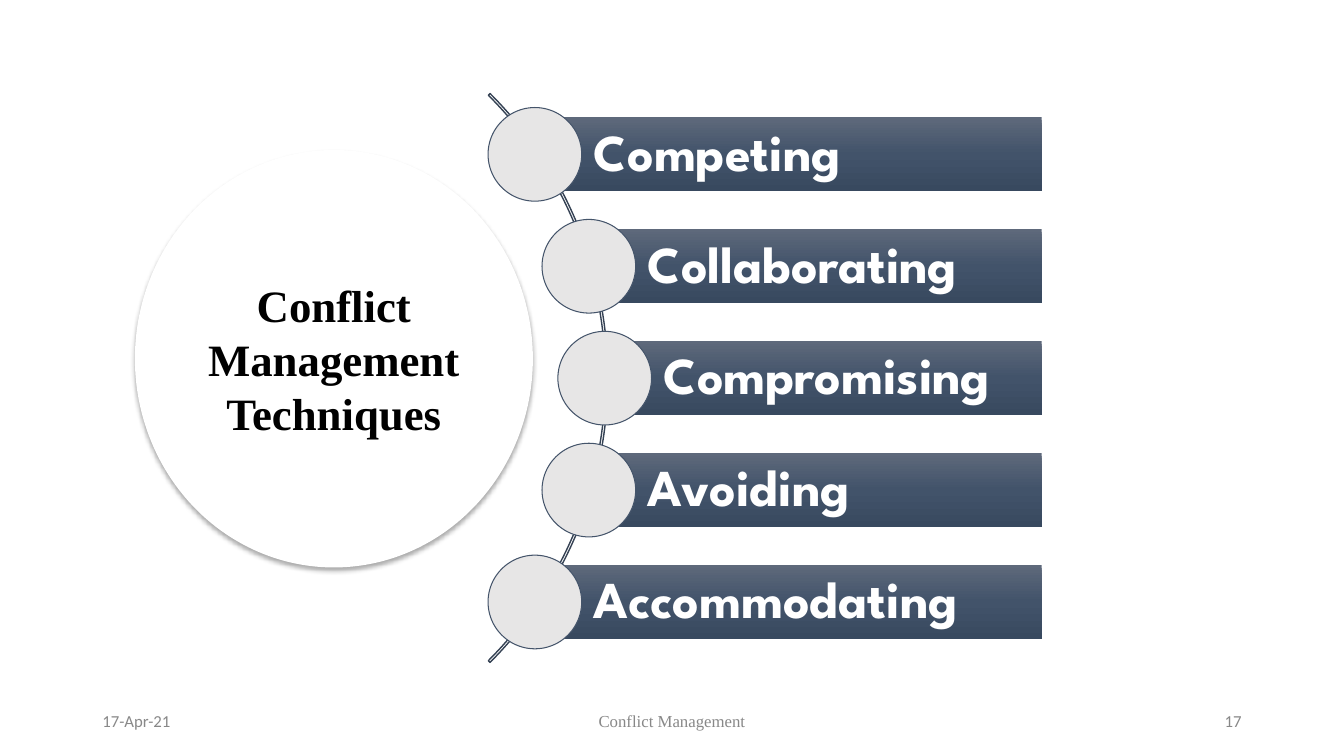
from dataclasses import dataclass
from copy import deepcopy

from lxml.etree import SubElement
from pptx import Presentation
from pptx.dml.color import RGBColor
from pptx.enum.shapes import MSO_SHAPE
from pptx.enum.text import MSO_ANCHOR, PP_ALIGN
from pptx.oxml.ns import qn
from pptx.shapes.autoshape import Shape
from pptx.shapes.shapetree import GroupShapes, SlideShapes
from pptx.text.text import TextFrame
from pptx.util import Cm, Pt


@dataclass(frozen=True)
class Theme:
    white: str = "FFFFFF"
    black: str = "000000"
    grey: str = "888888"
    arc_line: str = "354254"
    node_fill: str = "E7E6E6"
    node_line: str = "44546A"
    bar_stops: tuple[tuple[float, str], ...] = (
        (0, "5E697B"), (0.5, "42536A"), (1, "38495F"))
    bar_font: str = "League Spartan"
    heading_font: str = "Times New Roman"
    footer_font: str = "Calibri"
    bar_size: int = 37
    heading_size: int = 32
    footer_size: int = 12


@dataclass(frozen=True)
class Box:
    left: float
    top: float
    width: float
    height: float

    def lengths(self) -> tuple[Cm, Cm, Cm, Cm]:
        return Cm(self.left), Cm(self.top), Cm(self.width), Cm(self.height)


@dataclass(frozen=True)
class Style:
    font: str
    size: int
    color: str
    bold: bool = False
    align: PP_ALIGN = PP_ALIGN.LEFT
    line_spacing: float = 1.0
    insets: tuple[float, float, float, float] = (0.25, 0.13, 0.25, 0.13)


@dataclass(frozen=True)
class Technique:
    name: str
    node_x: float


@dataclass(frozen=True)
class FooterItem:
    text: str
    box: Box
    font: str
    align: PP_ALIGN


THEME = Theme()
ARC = Box(-4.95, -0.61, 20.27, 20.27)
HEADING = Box(3.4, 3.78, 10.03, 10.52)
MIDDLE_Y, PITCH = 9.53, 2.82
BAR_RIGHT, BAR_HEIGHT, NODE_SIZE = 26.25, 1.87, 2.36

TECHNIQUES = [
    Technique("Competing", 13.48),
    Technique("Collaborating", 14.84),
    Technique("Compromising", 15.24),
    Technique("Avoiding", 14.84),
    Technique("Accommodating", 13.48),
]
FOOTER = [
    FooterItem("17-Apr-21", Box(2.33, 17.66, 7.62, 1.01),
               THEME.footer_font, PP_ALIGN.LEFT),
    FooterItem("Conflict Management", Box(11.22, 17.66, 11.43, 1.01),
               THEME.heading_font, PP_ALIGN.CENTER),
    FooterItem("17", Box(23.92, 17.66, 7.62, 1.01),
               THEME.footer_font, PP_ALIGN.RIGHT),
]


def rgb(color: str) -> RGBColor:
    return RGBColor.from_string(color)


def apply_format(target: object, values: dict[str, object]) -> None:
    for name, value in values.items():
        setattr(target, name, value)


def write(frame: TextFrame, text: str, style: Style) -> None:
    left, top, right, bottom = style.insets
    apply_format(frame, {
        "word_wrap": True, "vertical_anchor": MSO_ANCHOR.MIDDLE,
        "margin_left": Cm(left), "margin_top": Cm(top),
        "margin_right": Cm(right), "margin_bottom": Cm(bottom)})
    paragraph = frame.paragraphs[0]
    apply_format(paragraph, {
        "alignment": style.align, "line_spacing": style.line_spacing})
    run = paragraph.add_run()
    run.text = text
    apply_format(run.font, {
        "name": style.font, "size": Pt(style.size), "bold": style.bold})
    run.font.color.rgb = rgb(style.color)


def add_part(shapes: SlideShapes | GroupShapes, preset: MSO_SHAPE, box: Box,
             fill: str | None = None, line: str | None = None,
             line_width: float = 0.75) -> Shape:
    part = shapes.add_shape(preset, *box.lengths())
    part.shadow.inherit = False
    if fill:
        part.fill.solid()
        part.fill.fore_color.rgb = rgb(fill)
    else:
        part.fill.background()
    if line:
        part.line.color.rgb = rgb(line)
        part.line.width = Pt(line_width)
    else:
        part.line.fill.background()
    return part


def shade_bar(bar: Shape) -> None:
    bar.fill.gradient()
    bar.fill.gradient_angle = 270
    stop_list = bar.element.spPr.find(".//" + qn("a:gsLst"))
    stop_list.append(deepcopy(stop_list[-1]))
    for stop, (position, color) in zip(bar.fill.gradient_stops, THEME.bar_stops):
        stop.position = position
        stop.color.rgb = rgb(color)


def drop_shadow(part: Shape) -> None:
    effects = part.element.spPr.find(qn("a:effectLst"))
    shadow = SubElement(effects, qn("a:outerShdw"), {
        "blurRad": str(Pt(3.5)), "dist": str(Pt(2.2)),
        "dir": "5400000", "rotWithShape": "0"})
    color = SubElement(shadow, qn("a:srgbClr"), val=THEME.black)
    SubElement(color, qn("a:alpha"), val="32000")


def add_technique(shapes: GroupShapes, technique: Technique, center_y: float) -> None:
    bar = add_part(shapes, MSO_SHAPE.RECTANGLE, Box(
        technique.node_x, center_y - BAR_HEIGHT / 2,
        BAR_RIGHT - technique.node_x, BAR_HEIGHT))
    shade_bar(bar)
    write(bar.text_frame, technique.name, Style(
        THEME.bar_font, THEME.bar_size, THEME.white, bold=True,
        line_spacing=0.9, insets=(1.49, 0.25, 0.25, 0.25)))
    add_part(shapes, MSO_SHAPE.OVAL, Box(
        technique.node_x - NODE_SIZE / 2, center_y - NODE_SIZE / 2,
        NODE_SIZE, NODE_SIZE), THEME.node_fill, THEME.node_line)


def main() -> None:
    deck = Presentation()
    deck.slide_width, deck.slide_height = Cm(33.87), Cm(19.05)
    shapes = deck.slides.add_slide(deck.slide_layouts[6]).shapes

    # Arc with the five techniques along it
    diagram = shapes.add_group_shape().shapes
    arc = add_part(diagram, MSO_SHAPE.BLOCK_ARC, ARC,
                   line=THEME.arc_line, line_width=1)
    for index, adjustment in enumerate((189, 27, 0.003)):
        arc.adjustments[index] = adjustment
    for index, technique in enumerate(TECHNIQUES):
        offset = index - len(TECHNIQUES) // 2
        add_technique(diagram, technique, MIDDLE_Y + offset * PITCH)

    # Heading circle
    heading = add_part(shapes, MSO_SHAPE.OVAL, HEADING, THEME.white)
    drop_shadow(heading)
    write(heading.text_frame, "Conflict Management Techniques", Style(
        THEME.heading_font, THEME.heading_size, THEME.black, bold=True,
        align=PP_ALIGN.CENTER))

    # Footer
    for item in FOOTER:
        footer = shapes.add_textbox(*item.box.lengths())
        write(footer.text_frame, item.text, Style(
            item.font, THEME.footer_size, THEME.grey, align=item.align))

    deck.save("out.pptx")


if __name__ == "__main__":
    main()
